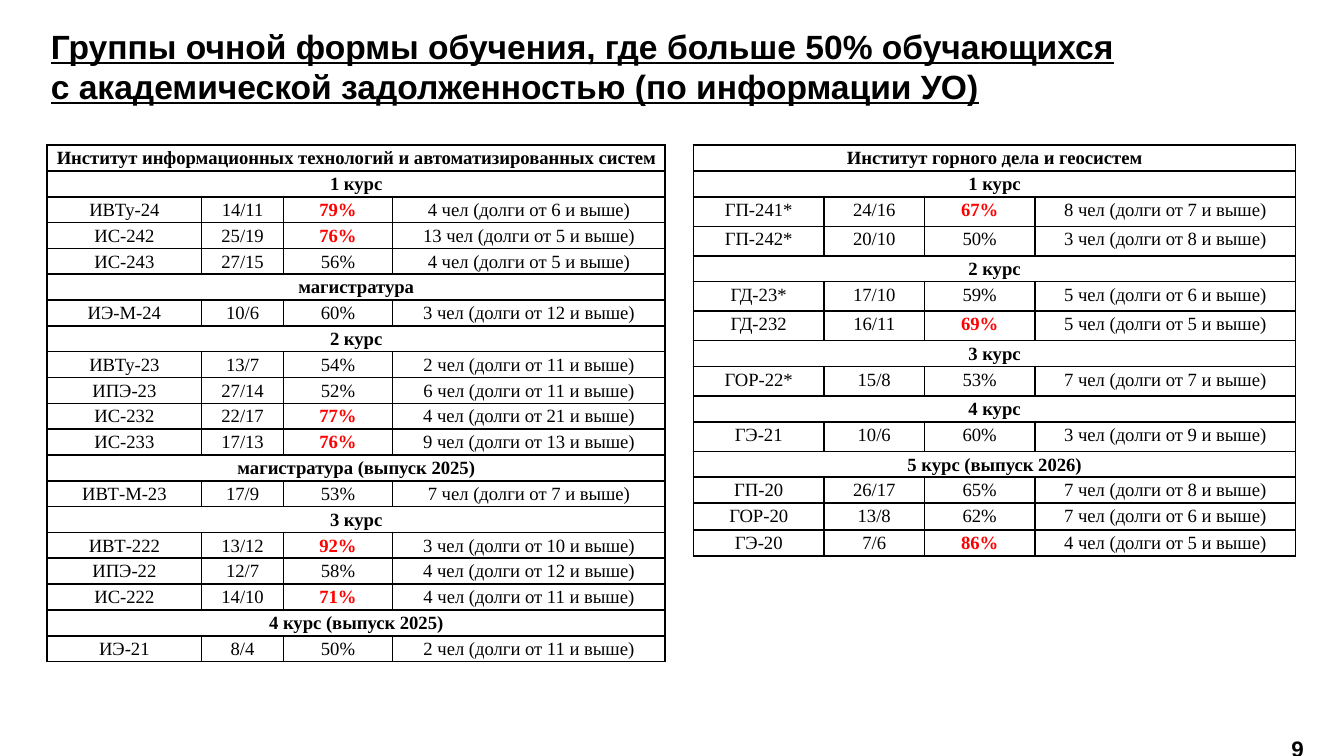
from dataclasses import dataclass

from lxml.etree import SubElement
from pptx import Presentation
from pptx.dml.color import RGBColor
from pptx.enum.text import MSO_AUTO_SIZE, PP_ALIGN
from pptx.oxml.ns import qn
from pptx.util import Inches, Pt

BLACK = "000000"
RED = "FF0000"
ALARM_PERCENT = 65  # shares above this are shown in bold red
HEADING_HEIGHT = 0.19


@dataclass
class Group:
    name: str
    ratio: str
    percent: int
    people: int
    debts: int
    height: float = 0.19


@dataclass
class Course:
    title: str
    groups: list[Group]


@dataclass
class Institute:
    title: str
    left: float
    columns: list[float]
    side_margin: float
    courses: list[Course]


INSTITUTES = [
    Institute(
        "Институт информационных технологий и автоматизированных систем",
        0.35, [1.15, 0.61, 0.81, 2.03], 0.05,
        [
            Course("1 курс", [
                Group("ИВТу-24", "14/11", 79, 4, 6),
                Group("ИС-242", "25/19", 76, 13, 5),
                Group("ИС-243", "27/15", 56, 4, 5),
            ]),
            Course("магистратура", [Group("ИЭ-М-24", "10/6", 60, 3, 12)]),
            Course("2 курс", [
                Group("ИВТу-23", "13/7", 54, 2, 11),
                Group("ИПЭ-23", "27/14", 52, 6, 11),
                Group("ИС-232", "22/17", 77, 4, 21),
                Group("ИС-233", "17/13", 76, 9, 13),
            ]),
            Course("магистратура (выпуск 2025)", [Group("ИВТ-М-23", "17/9", 53, 7, 7)]),
            Course("3 курс", [
                Group("ИВТ-222", "13/12", 92, 3, 10),
                Group("ИПЭ-22", "12/7", 58, 4, 12),
                Group("ИС-222", "14/10", 71, 4, 11),
            ]),
            Course("4 курс (выпуск 2025)", [Group("ИЭ-21", "8/4", 50, 2, 11)]),
        ],
    ),
    Institute(
        "Институт горного дела и геосистем",
        5.16, [0.97, 0.75, 0.82, 1.94], 0.07,
        [
            Course("1 курс", [
                Group("ГП-241*", "24/16", 67, 8, 7, 0.22),
                Group("ГП-242*", "20/10", 50, 3, 8, 0.22),
            ]),
            Course("2 курс", [
                Group("ГД-23*", "17/10", 59, 5, 6, 0.22),
                Group("ГД-232", "16/11", 69, 5, 5, 0.22),
            ]),
            Course("3 курс", [Group("ГОР-22*", "15/8", 53, 7, 7, 0.22)]),
            Course("4 курс", [Group("ГЭ-21", "10/6", 60, 3, 9, 0.22)]),
            Course("5 курс (выпуск 2026)", [
                Group("ГП-20", "26/17", 65, 7, 8),
                Group("ГОР-20", "13/8", 62, 7, 6, 0.2),
                Group("ГЭ-20", "7/6", 86, 4, 5),
            ]),
        ],
    ),
]


def color(value: str) -> RGBColor:
    return RGBColor.from_string(value)


def write(frame, text: str, *, size: float, font: str, fill: str = BLACK,
          bold: bool = False, underline: bool = False,
          align=PP_ALIGN.LEFT, spacing: float = 1.0) -> None:
    """Fill a text frame, one paragraph for each line of text."""
    for index, line in enumerate(text.split("\n")):
        para = frame.add_paragraph() if index else frame.paragraphs[0]
        para.alignment = align
        para.line_spacing = spacing
        span = para.add_run()
        span.text = line
        span.font.size = Pt(size)
        span.font.name = font
        span.font.bold = bold
        span.font.underline = underline
        span.font.color.rgb = color(fill)


def add_text(page, text: str, left: float, top: float, width: float,
             height: float, **style) -> None:
    box = page.shapes.add_textbox(Inches(left), Inches(top), Inches(width), Inches(height))
    box.text_frame.word_wrap = True
    box.text_frame.auto_size = MSO_AUTO_SIZE.SHAPE_TO_FIT_TEXT
    write(box.text_frame, text, **style)


def format_cell(cell, side_margin: float) -> None:
    """Set margins, a one-point border on every side and no fill."""
    cell.margin_left = cell.margin_right = Inches(side_margin)
    cell.margin_top = cell.margin_bottom = 0
    properties = cell._tc.get_or_add_tcPr()
    for side in ("a:lnL", "a:lnR", "a:lnT", "a:lnB"):
        line = SubElement(properties, qn(side), w=str(Pt(1)))
        SubElement(SubElement(line, qn("a:solidFill")), qn("a:srgbClr"), val=BLACK)
    cell.fill.background()


def write_cell(cell, text: str, bold: bool = False, fill: str = BLACK) -> None:
    write(cell.text_frame, text, size=10, font="Times New Roman", fill=fill,
          bold=bold, align=PP_ALIGN.CENTER, spacing=1.15)


def add_institute(page, institute: Institute) -> None:
    # Headings are plain strings, data rows are groups
    entries: list[str | Group] = [institute.title]
    for course in institute.courses:
        entries += [course.title, *course.groups]
    heights = [HEADING_HEIGHT if isinstance(entry, str) else entry.height for entry in entries]

    table = page.shapes.add_table(
        len(entries), len(institute.columns), Inches(institute.left), Inches(1.08),
        Inches(sum(institute.columns)), Inches(sum(heights))).table
    table.first_row = table.horz_banding = False
    for column, width in zip(table.columns, institute.columns):
        column.width = Inches(width)

    for row, entry, height in zip(table.rows, entries, heights):
        row.height = Inches(height)
        cells = list(row.cells)
        for cell in cells:
            format_cell(cell, institute.side_margin)
        if isinstance(entry, str):
            cells[0].merge(cells[-1])
            write_cell(cells[0], entry, bold=True)
            continue
        alarm = entry.percent > ALARM_PERCENT
        write_cell(cells[0], entry.name)
        write_cell(cells[1], entry.ratio)
        write_cell(cells[2], f"{entry.percent}%", bold=alarm, fill=RED if alarm else BLACK)
        write_cell(cells[3], f"{entry.people} чел (долги от {entry.debts} и выше)")


def main() -> None:
    deck = Presentation()
    # Widescreen page, 16 to 9
    deck.slide_width = Inches(10)
    deck.slide_height = deck.slide_width * 9 // 16
    page = deck.slides.add_slide(deck.slide_layouts[6])

    # Title
    add_text(page, "Группы очной формы обучения, где больше 50% обучающихся\n"
                   "с академической задолженностью (по информации УО)",
             0.28, 0.14, 8.74, 0.71, size=18, font="Arial", bold=True, underline=True)

    # One table for each institute
    for institute in INSTITUTES:
        add_institute(page, institute)

    # Page number
    add_text(page, "9", 9.33, 5.32, 0.65, 0.37, size=12, font="Arial", bold=True,
             align=PP_ALIGN.CENTER, spacing=1.5)

    deck.save("out.pptx")


if __name__ == "__main__":
    main()
